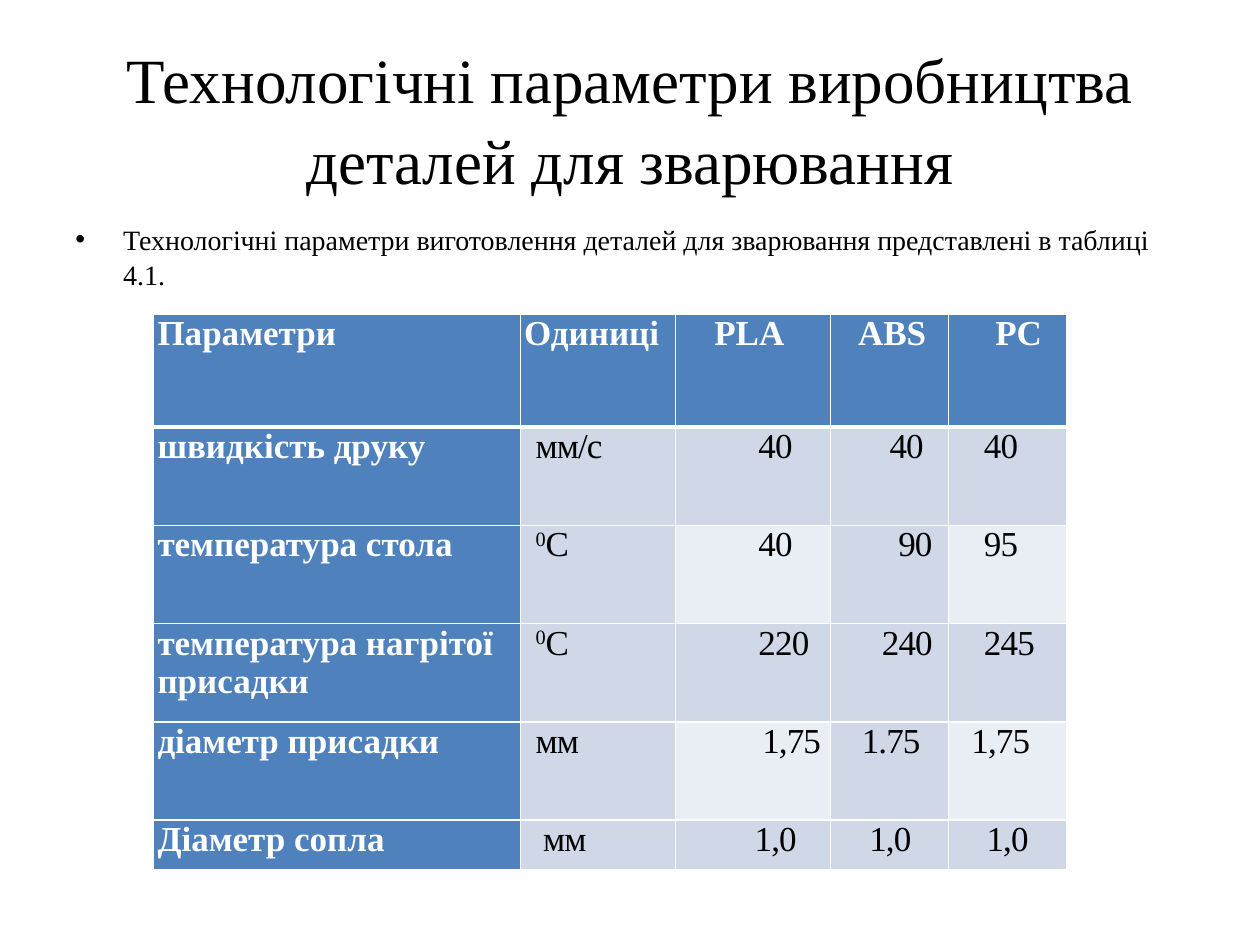
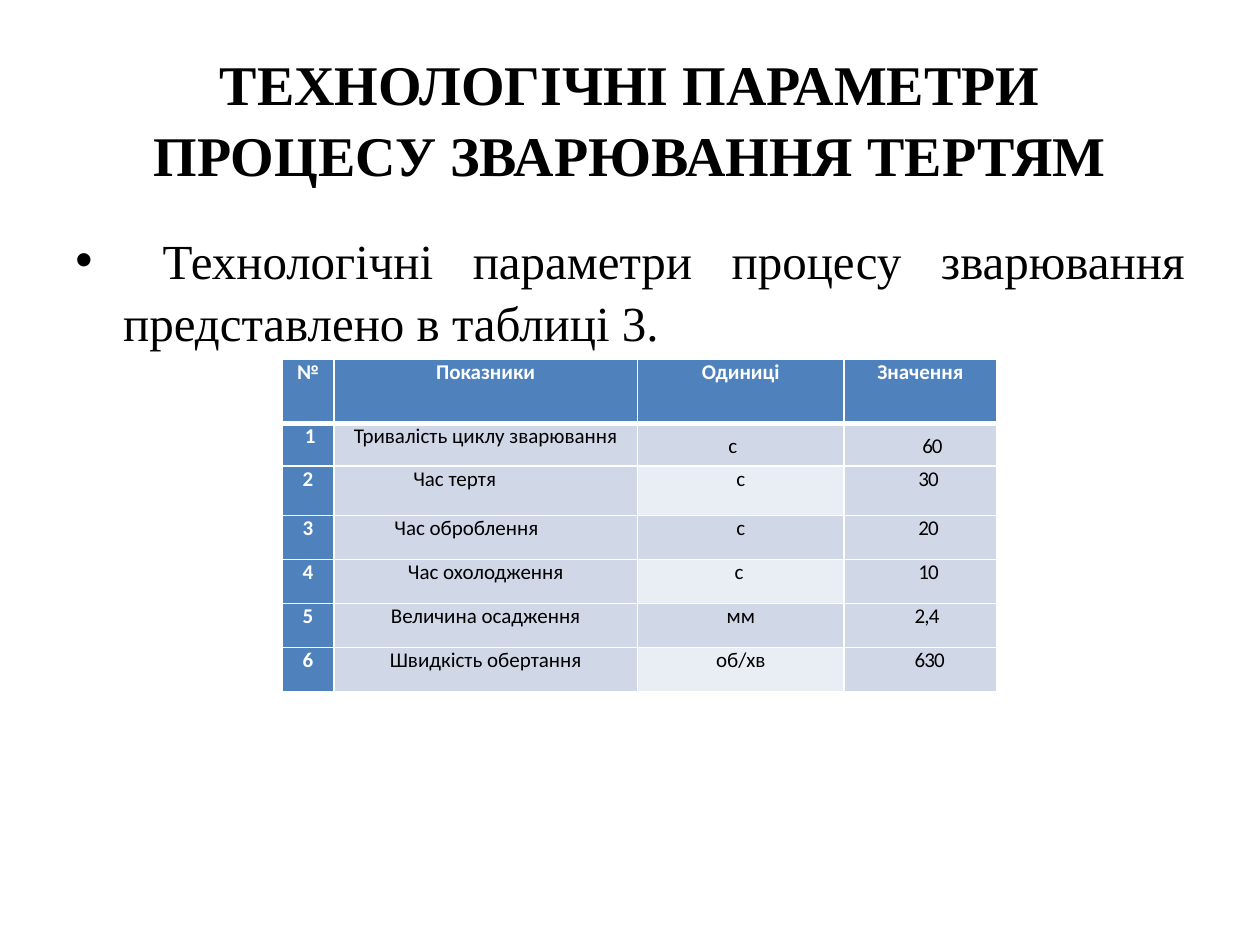
from dataclasses import dataclass

from lxml.etree import SubElement
from pptx import Presentation
from pptx.dml.color import RGBColor
from pptx.enum.text import MSO_ANCHOR as Anchor, PP_ALIGN as Align
from pptx.oxml.ns import qn
from pptx.util import Inches, Pt

BLACK = RGBColor(0x00, 0x00, 0x00)
WHITE = RGBColor(0xFF, 0xFF, 0xFF)
ACCENT = RGBColor(0x4F, 0x81, 0xBD)
BAND_DARK = RGBColor(0xD0, 0xD8, 0xE8)
BAND_LIGHT = RGBColor(0xE9, 0xED, 0xF4)

SERIF, SANS = "Times New Roman", "Calibri"
LINE_SPACING = 1.06
HANGING = 0.38
CELL_MARGINS = {"margin_left": Inches(0.03), "margin_right": Inches(0.03),
                "margin_top": 0, "margin_bottom": 0}


@dataclass
class Entry:
    """One table entry; an indent places it from the left edge of its cell."""
    text: str
    indent: float | None = None
    raised: str = ""
    line_spacing: float = 1.0


def apply(target, values):
    for name, value in values.items():
        setattr(target, name, value)


class Deck:
    def __init__(self):
        self.prs = Presentation()
        apply(self.prs, {"slide_width": Inches(10), "slide_height": Inches(7.5)})
        self.slide = None

    def new_slide(self):
        self.slide = self.prs.slides.add_slide(self.prs.slide_layouts[6])

    def run(self, paragraph, text, size, font, color=BLACK, bold=False):
        run = paragraph.add_run()
        run.text = text
        apply(run.font, {"size": Pt(size), "name": font, "bold": bold})
        run.font.color.rgb = color
        return run

    def text_box(self, top, height, align, anchor=Anchor.TOP):
        box = self.slide.shapes.add_textbox(Inches(0.5), Inches(top), Inches(9), Inches(height))
        apply(box.text_frame, {"word_wrap": True, "vertical_anchor": anchor})
        paragraph = box.text_frame.paragraphs[0]
        apply(paragraph, {"alignment": align, "line_spacing": LINE_SPACING})
        return paragraph

    def title(self, text, size, bold=False):
        paragraph = self.text_box(0.3, 1.25, Align.CENTER, Anchor.MIDDLE)
        self.run(paragraph, text, size, SERIF, bold=bold)

    def bullet(self, text, top, height, size, align=Align.LEFT):
        paragraph = self.text_box(top, height, align)
        props = paragraph._p.get_or_add_pPr()
        props.set("marL", str(Inches(HANGING)))
        props.set("indent", str(-Inches(HANGING)))
        SubElement(props, qn("a:buFont"), typeface="Arial")
        SubElement(props, qn("a:buChar"), char="•")
        self.run(paragraph, text, size, SERIF)

    def borders(self, cell, row):
        """White lines around a cell, thicker under the header row."""
        widths = {"lnL": 1, "lnR": 1, "lnT": 3 if row == 1 else 1, "lnB": 3 if row == 0 else 1}
        props = cell._tc.get_or_add_tcPr()
        for side, width in widths.items():
            line = SubElement(props, qn(f"a:{side}"), w=str(Pt(width)))
            fill = SubElement(line, qn("a:solidFill"))
            SubElement(fill, qn("a:srgbClr"), val=str(WHITE))

    def cell(self, cell, entry, row, col, size, font, align, tight):
        heading = row == 0 or col == 0
        self.borders(cell, row)
        cell.fill.solid()
        band = BAND_DARK if row % 2 or col % 2 else BAND_LIGHT
        cell.fill.fore_color.rgb = ACCENT if heading else band
        apply(cell, CELL_MARGINS)

        paragraph = cell.text_frame.paragraphs[0]
        apply(paragraph, {"alignment": align, "line_spacing": entry.line_spacing})
        if entry.indent is not None:
            paragraph.alignment = Align.LEFT
            paragraph._p.get_or_add_pPr().set("marL", str(Inches(entry.indent)))
        color = WHITE if heading else BLACK
        for text, baseline in ((entry.raised, 30000), (entry.text, 0)):
            if text:
                props = self.run(paragraph, text, size, font, color, heading)._r.get_or_add_rPr()
                props.set("baseline", str(baseline))
                if tight and not heading:
                    props.set("spc", "-50")

    def table(self, left, top, widths, heights, entries, size, font, align, tight_from):
        """Draw the entries; columns from tight_from on have closer letters."""
        table = self.slide.shapes.add_table(
            len(heights), len(widths), Inches(left), Inches(top),
            Inches(sum(widths)), Inches(sum(heights))).table
        apply(table, {"first_row": False, "horz_banding": False})
        for column, width in zip(table.columns, widths):
            column.width = Inches(width)
        for table_row, height in zip(table.rows, heights):
            table_row.height = Inches(height)
        for row, line in enumerate(entries):
            for col, item in enumerate(line):
                entry = item if isinstance(item, Entry) else Entry(item)
                self.cell(table.cell(row, col), entry, row, col, size, font,
                          align, col >= tight_from)


def printing_slide(deck):
    deck.new_slide()
    deck.title("Технологічні параметри виробництва деталей для зварювання", 36)
    deck.bullet("Технологічні параметри виготовлення деталей для зварювання "
                "представлені в таблиці 4.1.", 1.7, 5.5, 16)
    celsius = Entry("С", 0.09, raised="0")
    entries = [
        ["Параметри", "Одиниці", Entry("PLA", 0.28), Entry("ABS", 0.19), Entry("PC", 0.34)],
        ["швидкість друку", Entry("мм/с", 0.09),
         Entry("40", 0.63), Entry("40", 0.44), Entry("40", 0.25)],
        ["температура стола", celsius,
         Entry("40", 0.63), Entry("90", 0.51), Entry("95", 0.25)],
        ["температура нагрітої присадки", celsius,
         Entry("220", 0.63), Entry("240", 0.38), Entry("245", 0.25)],
        ["діаметр присадки", Entry("мм", 0.09),
         Entry("1,75", 0.66), Entry("1.75", 0.22), Entry("1,75", 0.15)],
        ["Діаметр сопла", Entry("мм", 0.15),
         Entry("1,0", 0.6), Entry("1,0", 0.28), Entry("1,0", 0.27)],
    ]
    deck.table(1.22, 2.49, [2.91, 1.23, 1.23, 0.94, 0.94], [0.9] + [0.78] * 4 + [0.39],
               entries, 20, SERIF, Align.LEFT, tight_from=1)


def welding_slide(deck):
    deck.new_slide()
    deck.title("ТЕХНОЛОГІЧНІ ПАРАМЕТРИ ПРОЦЕСУ ЗВАРЮВАННЯ ТЕРТЯМ", 32, bold=True)
    deck.bullet(" Технологічні параметри процесу зварювання представлено в таблиці 3.",
                1.75, 4.95, 28, Align.JUSTIFY)
    entries = [
        ["№", "Показники", "Одиниці", "Значення"],
        [Entry("1", 0.15), "Тривалість циклу зварювання",
         Entry("с", 0.69, line_spacing=1.4), Entry("60", 0.59, line_spacing=1.4)],
        ["2", Entry("Час тертя", 0.6), "с", Entry("30", 0.56)],
        ["3", Entry("Час оброблення", 0.45), "с", Entry("20", 0.56)],
        ["4", "Час охолодження", Entry("с", 0.74), Entry("10", 0.56)],
        ["5", "Величина осадження", "мм", Entry("2,4", 0.53)],
        ["6", "Швидкість обертання", "об/хв", Entry("630", 0.53)],
    ]
    deck.table(2.24, 2.85, [0.41, 2.41, 1.64, 1.21], [0.51, 0.34, 0.39] + [0.35] * 4,
               entries, 12, SANS, Align.CENTER, tight_from=3)


def main():
    deck = Deck()
    printing_slide(deck)
    welding_slide(deck)
    deck.prs.save("out.pptx")


if __name__ == "__main__":
    main()
